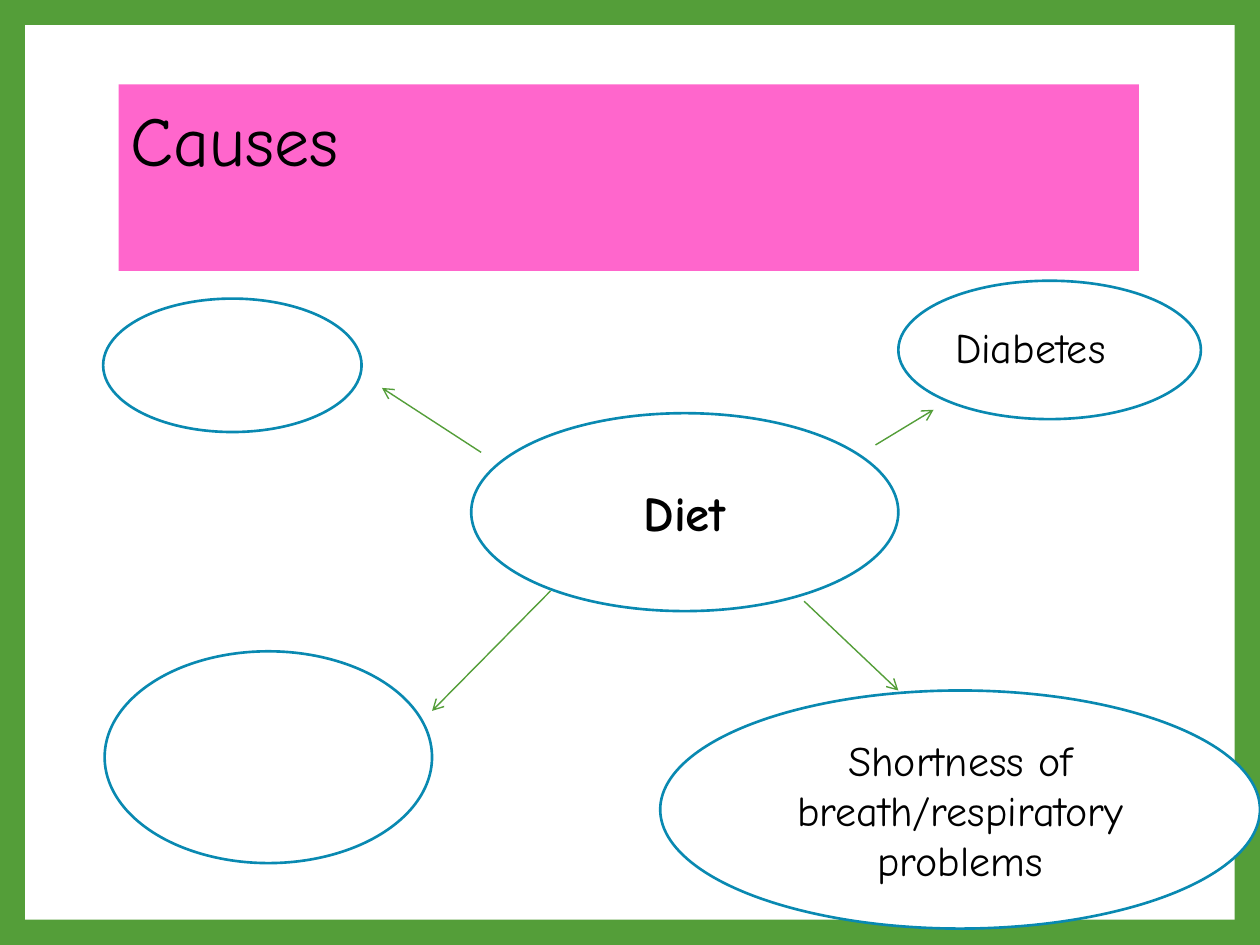
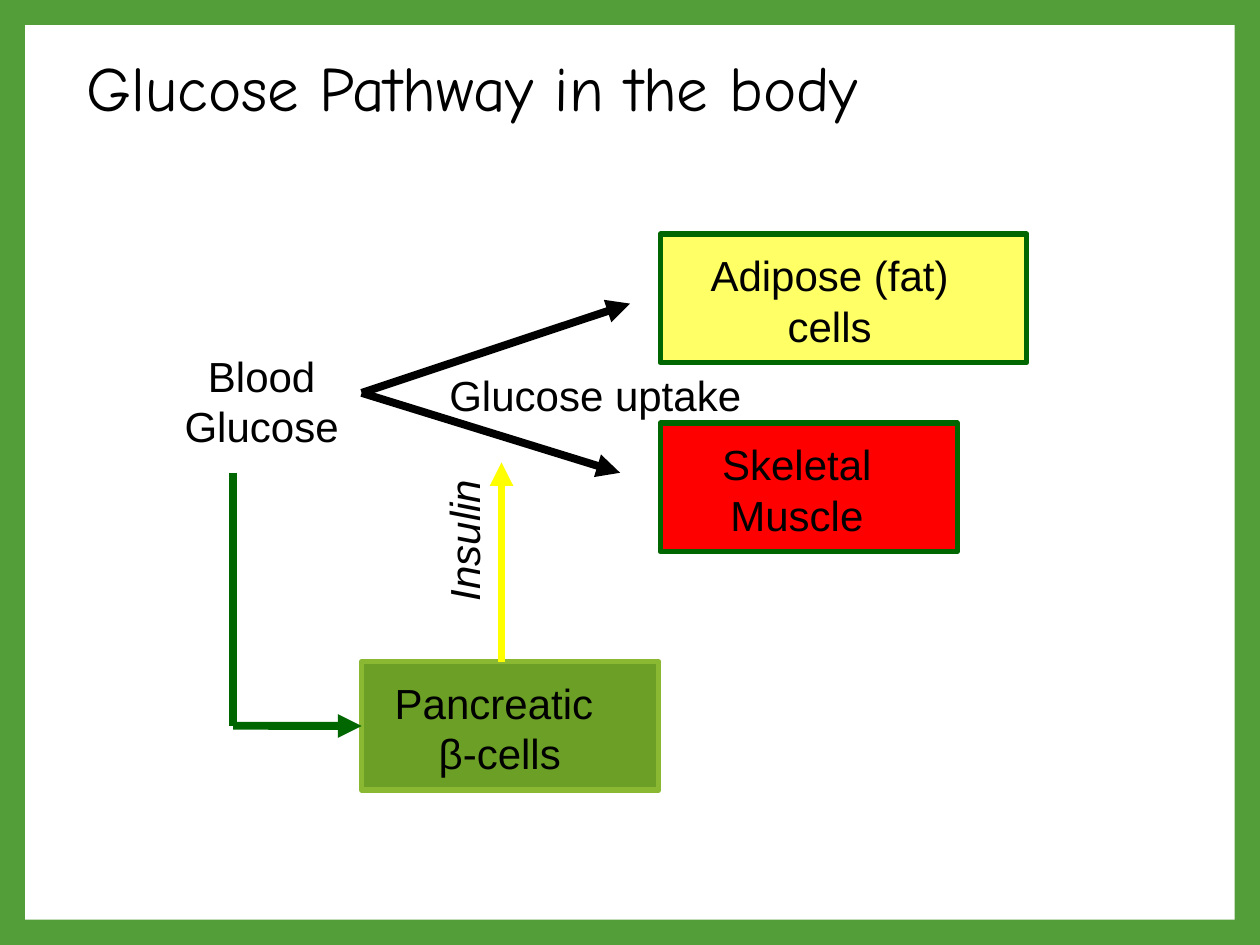
from pptx import Presentation
from pptx import util as u
from pptx.dml.color import RGBColor
from pptx.enum import shapes, text
from pptx.oxml import ns, xmlchemy

GREEN = RGBColor(0x54, 0x9E, 0x39)
DARK_GREEN = RGBColor(0x00, 0x66, 0x00)
LEAF = RGBColor(0x6B, 0x9F, 0x25)
LIME = RGBColor(0x8A, 0xB8, 0x33)
PINK = RGBColor(0xFF, 0x66, 0xCC)
BLUE = RGBColor(0x09, 0x89, 0xB1)
PALE_YELLOW = RGBColor(0xFF, 0xFF, 0x66)
YELLOW = RGBColor(0xFF, 0xFF, 0x00)
RED = RGBColor(0xFF, 0x00, 0x00)
WHITE = RGBColor(0xFF, 0xFF, 0xFF)
BLACK = RGBColor(0x00, 0x00, 0x00)

HAND_FONT = "Comic Neue"
PLAIN_FONT = "Arial"
RECTANGLE = shapes.MSO_SHAPE.RECTANGLE
OVAL = shapes.MSO_SHAPE.OVAL
LEFT, CENTER = text.PP_ALIGN.LEFT, text.PP_ALIGN.CENTER
TOP, MIDDLE = text.MSO_ANCHOR.TOP, text.MSO_ANCHOR.MIDDLE


def add_box(slide, place, words="", kind=None, fill=None, line=None, width=1.5,
            font=PLAIN_FONT, size=24, bold=False, italic=False, align=CENTER,
            anchor=TOP, spacing=1.0, top_inset=0.13):
    """Add a preset shape, or a text box when kind is None; place is in cm."""
    place = [u.Cm(length) for length in place]
    if kind is None:
        shape = slide.shapes.add_textbox(*place)
    else:
        shape = slide.shapes.add_shape(kind, *place)
        shape.shadow.inherit = False
    if fill is not None:
        shape.fill.solid()
        shape.fill.fore_color.rgb = fill
    if line is None:
        shape.line.fill.background()
    else:
        shape.line.color.rgb = line
        shape.line.width = u.Pt(width)
    frame = shape.text_frame
    frame.word_wrap = True
    frame.vertical_anchor = anchor
    frame.margin_top = u.Cm(top_inset)
    frame.text = words
    for paragraph in frame.paragraphs:
        paragraph.alignment = align
        paragraph.line_spacing = spacing
        paragraph.font.name = font
        paragraph.font.size = u.Pt(size)
        paragraph.font.bold = bold
        paragraph.font.italic = italic
        paragraph.font.color.rgb = BLACK
    return shape


def add_line(slide, start, end, color, width, head=None):
    """Add a straight line between two points in cm, with an optional arrowhead."""
    connector = slide.shapes.add_connector(
        shapes.MSO_CONNECTOR.STRAIGHT, *[u.Cm(value) for value in start + end])
    connector.line.color.rgb = color
    connector.line.width = u.Pt(width)
    properties = connector._element.spPr
    if head:
        tail = xmlchemy.OxmlElement("a:tailEnd")
        tail.set("type", head)
        properties.find(ns.qn("a:ln")).append(tail)
    properties.append(xmlchemy.OxmlElement("a:effectLst"))
    return connector


presentation = Presentation()
presentation.slide_width = u.Cm(25.4)
presentation.slide_height = u.Cm(19.05)

# Both slides: green border around a white panel, and a title
titles = [
    ("Causes", (2.39, 1.7, 20.57, 3.76),
     dict(size=40, kind=RECTANGLE, fill=PINK)),
    ("Glucose Pathway in the body", (1.5, 0.91, 20.75, 3.18),
     dict(size=36, spacing=0.9)),
]
for title, place, style in titles:
    slide = presentation.slides.add_slide(presentation.slide_layouts[6])
    slide.background.fill.solid()
    slide.background.fill.fore_color.rgb = GREEN
    add_box(slide, (0.51, 0.51, 24.38, 18.03), kind=RECTANGLE, fill=WHITE)
    add_box(slide, place, title, font=HAND_FONT, align=LEFT, top_inset=0.25, **style)
causes, pathway = presentation.slides

# Causes: mind map around diet
bubbles = [
    ((9.5, 8.33, 8.61, 3.99), "Diet", dict(size=28, bold=True)),
    ((2.08, 6.02, 5.21, 2.69), "", {}),
    ((18.11, 5.66, 6.1, 2.79), "Diabetes", dict(align=LEFT, spacing=0.9)),
    ((2.11, 13.13, 6.6, 4.27), "", {}),
    ((13.31, 13.92, 12.09, 4.8), "Shortness of breath/respiratory problems", {}),
]
for place, words, style in bubbles:
    add_box(causes, place, words, kind=OVAL, fill=WHITE, line=BLUE,
            font=HAND_FONT, anchor=MIDDLE, **style)

for start, end in [
    ((17.65, 8.97), (18.82, 8.26)),
    ((9.7, 9.12), (7.7, 7.82)),
    ((11.1, 11.91), (8.71, 14.33)),
    ((16.21, 12.12), (18.11, 13.92)),
]:
    add_line(causes, start, end, GREEN, 0.79, "arrow")

# Glucose pathway: tissue boxes, each with its label
tissues = [
    ((13.31, 4.72, 7.39), PALE_YELLOW, DARK_GREEN, (13.79, 5.87), "Adipose (fat)\ncells"),
    ((13.31, 8.53, 5.99), RED, DARK_GREEN, (13.69, 4.75), "Skeletal\nMuscle"),
    ((7.29, 13.34, 5.99), LEAF, LIME, (7.7, 4.75), "Pancreatic \nβ-cells"),
]
for (left, top, width), fill, line, (label_left, label_width), words in tissues:
    tissue = add_box(pathway, (left, top, width, 2.59), kind=RECTANGLE,
                     fill=fill, line=line, width=3)
    add_box(pathway, (label_left, top + 0.19, label_width, 2.29), words)
pancreas = tissue

add_box(pathway, (2.9, 6.93, 4.75, 2.29), "Blood\nGlucose")

corner = (4.7, 14.63)
add_line(pathway, (4.7, 9.53), corner, DARK_GREEN, 4.5)
to_pancreas = add_line(pathway, corner, (7.29, 14.63), DARK_GREEN, 4.5, "triangle")
to_pancreas.end_connect(pancreas, 1)

for uptake_end in [(12.7, 6.12), (12.5, 9.53)]:
    add_line(pathway, (7.29, 7.92), uptake_end, BLACK, 4.5, "triangle")
add_box(pathway, (7.49, 7.32, 9.02, 1.27), "Glucose uptake")

insulin = add_box(pathway, (6.96, 10.26, 4.75, 1.27), "Insulin", italic=True)
insulin.rotation = 270
add_line(pathway, (10.11, 13.34), (10.11, 9.32), YELLOW, 4.5, "triangle")

presentation.save("out.pptx")
